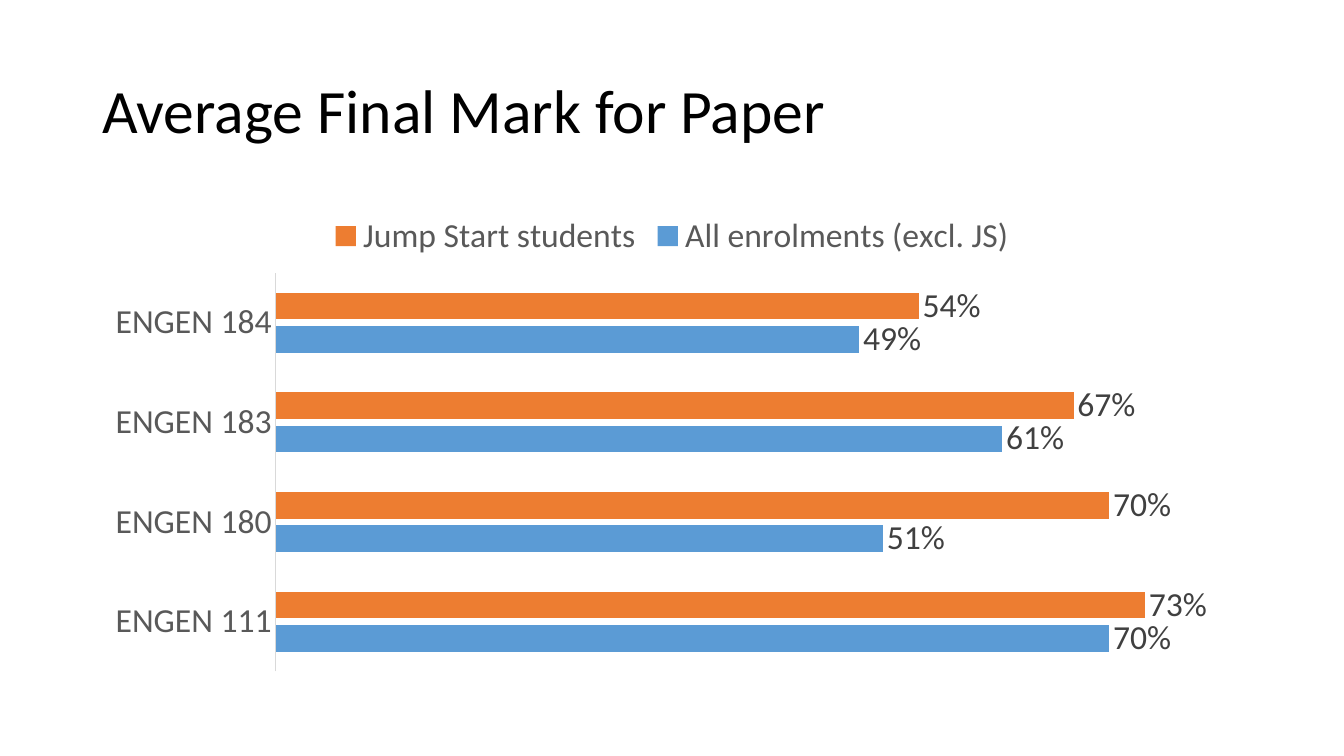
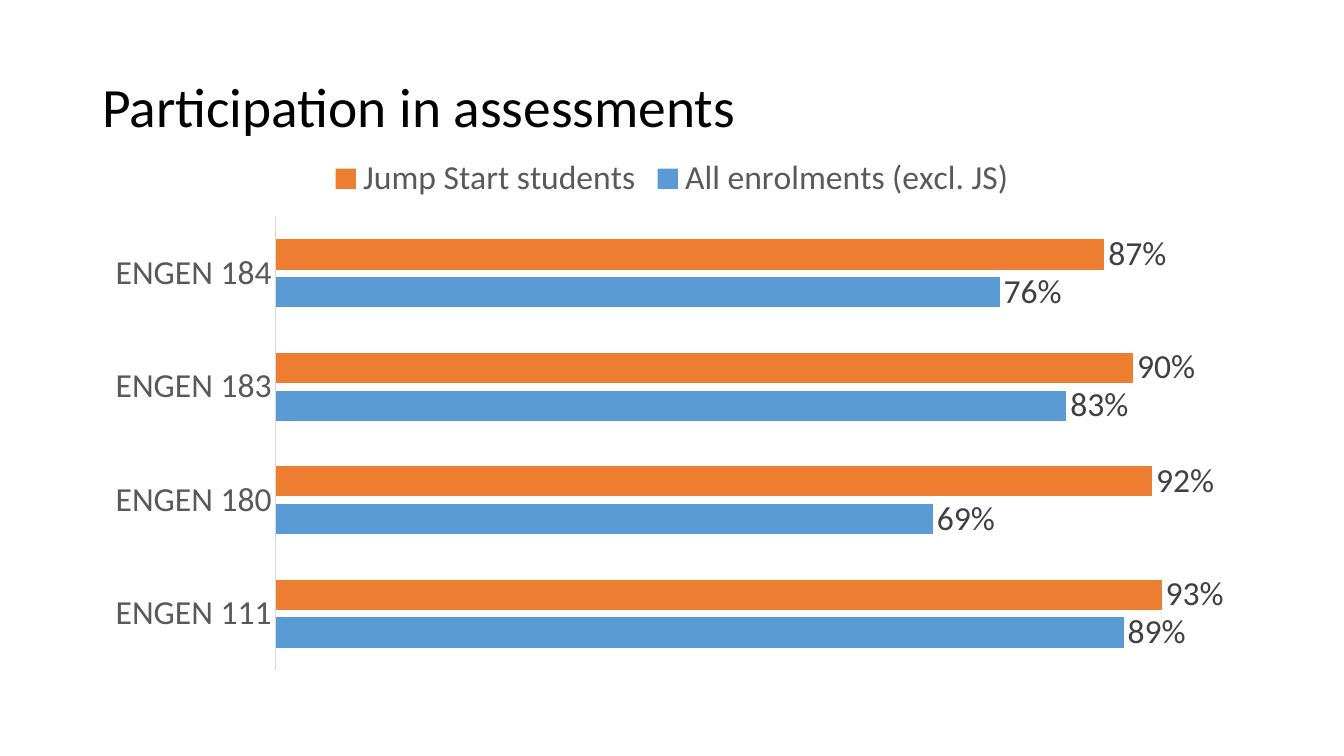
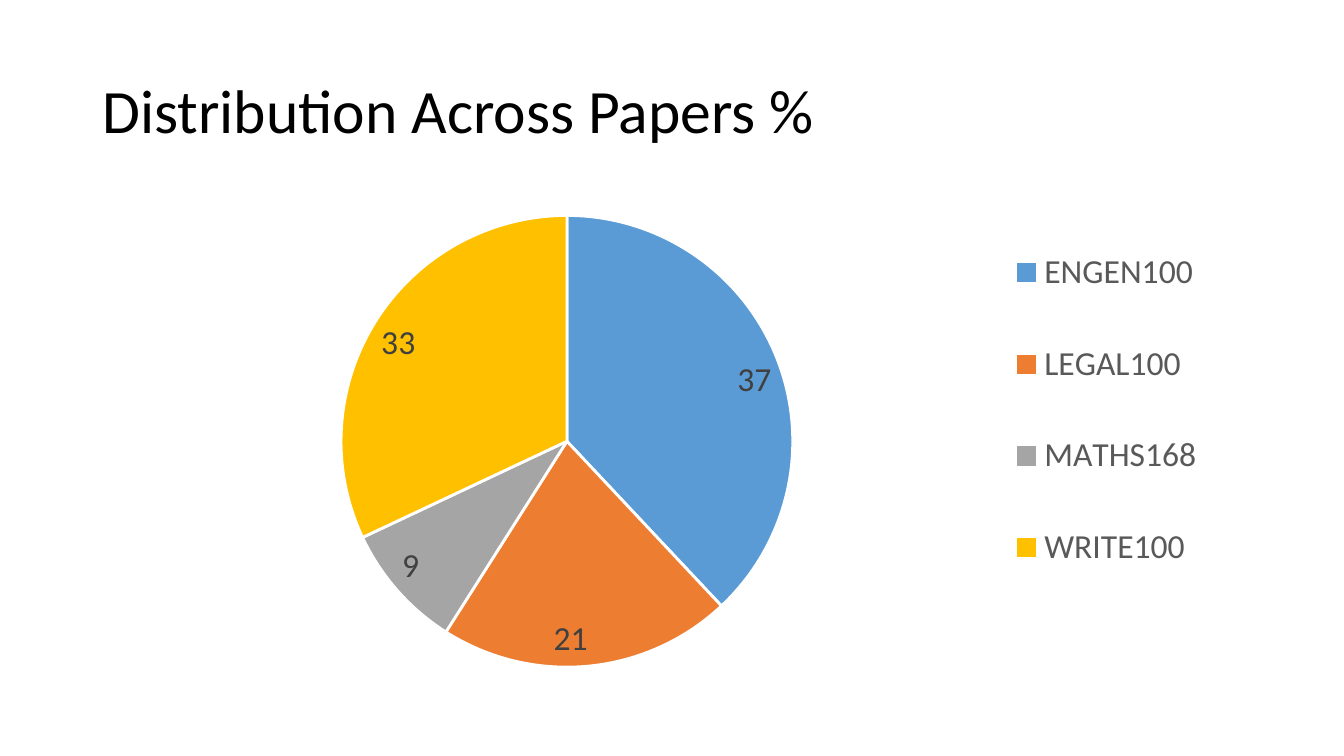
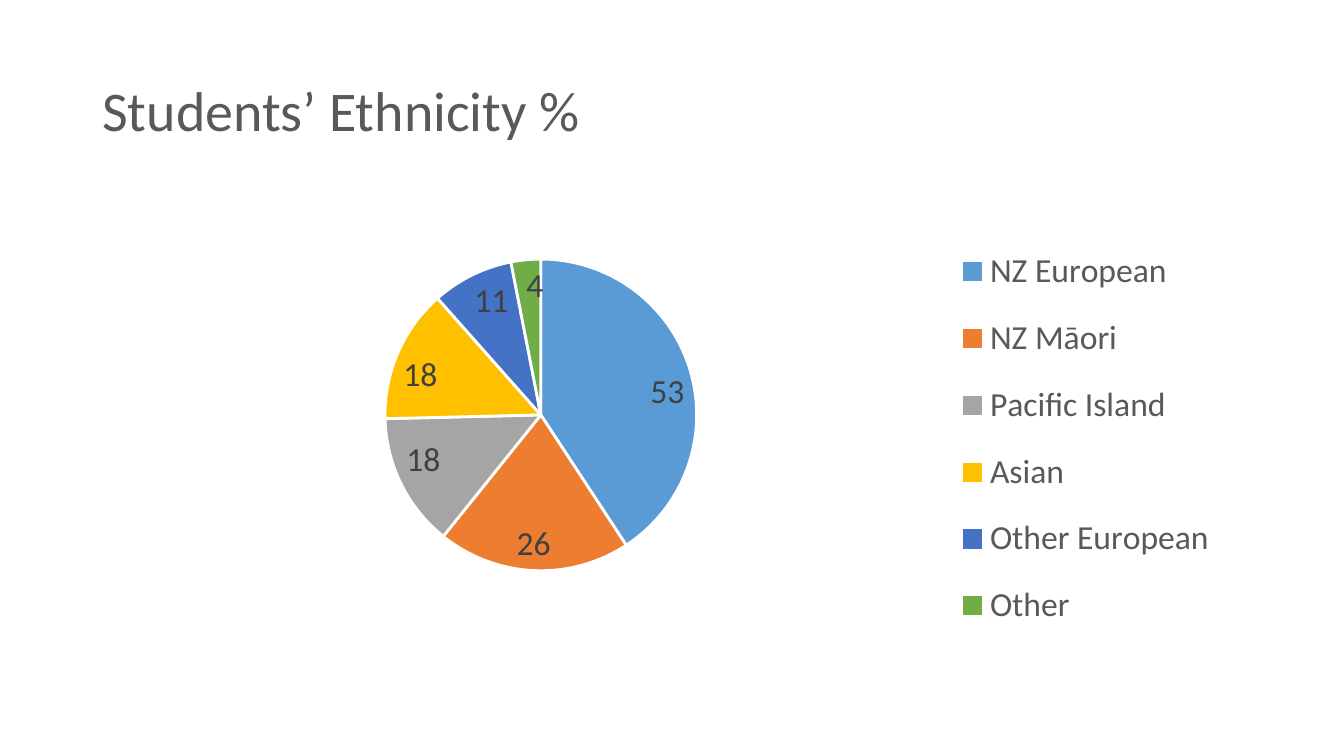
import pptx
import pptx.chart.data
import pptx.dml.color
import pptx.enum.chart
import pptx.enum.text
import pptx.oxml
import pptx.oxml.ns
import pptx.util

Pt = pptx.util.Pt
Chart = pptx.enum.chart

BLACK, DARK, GREY, PALE, WHITE = "000000", "404040", "595959", "D9D9D9", "FFFFFF"
ACCENTS = ["5B9BD5", "ED7D31", "A5A5A5", "FFC000", "4472C4", "70AD47"]
PAPERS = ["ENGEN 111", "ENGEN 180", "ENGEN 183", "ENGEN 184"]
GROUPS = ["All enrolments (excl. JS)", "Jump Start students"]
LEFT, WIDTH, CHART_BOTTOM = 66, 828, 486.5


def rgb(code):
    return pptx.dml.color.RGBColor.from_string(code)


def set_font(font, size, color):
    values = {"name": "Calibri", "size": Pt(size), "bold": False}
    for name, value in values.items():
        setattr(font, name, value)
    font.color.rgb = rgb(color)


pages = [
    {"title": "Average Final Mark for Paper", "size": 44, "color": BLACK,
     "title_top": 28.8, "left": LEFT, "top": 144, "kind": "bar", "maximum": 0.8,
     "categories": PAPERS,
     "series": [[0.70, 0.51, 0.61, 0.49], [0.73, 0.70, 0.67, 0.54]]},
    {"title": "Participation in assessments", "size": 39.6, "color": BLACK,
     "title_top": 26, "left": LEFT, "top": 103, "kind": "bar", "maximum": 1,
     "categories": PAPERS,
     "series": [[0.89, 0.69, 0.83, 0.76], [0.93, 0.92, 0.90, 0.87]]},
    {"title": "Distribution Across Papers %", "size": 44, "color": BLACK,
     "title_top": 28.8, "left": LEFT, "top": 144, "kind": "pie",
     "categories": ["ENGEN100", "LEGAL100", "MATHS168", "WRITE100"],
     "series": [[38, 21, 9, 32]], "labels": {0: "37", 3: "33"},
     "layouts": {"legend": {"x": 0.78, "y": 0, "w": 0.19, "h": 0.87}}},
    {"title": "Students’ Ethnicity %", "size": 40, "color": GREY,
     "title_top": 28.8, "left": 80, "top": 144, "kind": "pie",
     "categories": ["NZ European", "NZ Māori", "Pacific Island", "Asian",
                    "Other European", "Other"],
     "series": [[53, 26, 18, 18, 11, 4]],
     "layouts": {"plotArea": {"x": 0.04, "y": 0.12, "w": 0.66, "h": 0.65},
                 "legend": {"x": 0.72, "y": 0.05, "w": 0.24, "h": 0.89}}},
]

deck = pptx.Presentation()
deck.slide_width, deck.slide_height = Pt(960), Pt(540)

for page in pages:
    slide = deck.slides.add_slide(deck.slide_layouts[6])

    box = slide.shapes.add_textbox(Pt(LEFT), Pt(page["title_top"]), Pt(WIDTH), Pt(104.4))
    box.text_frame.word_wrap = True
    box.text_frame.vertical_anchor = pptx.enum.text.MSO_ANCHOR.MIDDLE
    para = box.text_frame.paragraphs[0]
    para.line_spacing = 0.9
    span = para.add_run()
    span.text = page["title"]
    set_font(span.font, page["size"], page["color"])

    is_bar = page["kind"] == "bar"
    data = pptx.chart.data.CategoryChartData(number_format="0%" if is_bar else "0")
    data.categories = page["categories"]
    for name, values in zip(GROUPS if is_bar else ["Series 1"], page["series"]):
        data.add_series(name, values)
    chart_type = Chart.XL_CHART_TYPE.BAR_CLUSTERED if is_bar else Chart.XL_CHART_TYPE.PIE
    chart = slide.shapes.add_chart(
        chart_type, Pt(page["left"]), Pt(page["top"]), Pt(WIDTH),
        Pt(CHART_BOTTOM - page["top"]), data).chart
    set_font(chart.font, 10, BLACK)
    chart.has_title = False
    chart.has_legend = True
    legend_place = Chart.XL_LEGEND_POSITION
    chart.legend.position = legend_place.TOP if is_bar else legend_place.RIGHT
    chart.legend.include_in_layout = False
    set_font(chart.legend.font, 24, GREY)

    plot = chart.plots[0]
    plot.vary_by_categories = not is_bar
    label_place = Chart.XL_LABEL_POSITION
    label_values = {
        "show_value": True,
        "number_format": "0%" if is_bar else "0",
        "number_format_is_linked": False,
        "position": label_place.OUTSIDE_END if is_bar else label_place.INSIDE_END,
    }
    for series in plot.series:
        for name, value in label_values.items():
            setattr(series.data_labels, name, value)
        set_font(series.data_labels.font, 24, DARK)

    if is_bar:
        plot.gap_width, plot.overlap = 150, -25
        for series, color in zip(plot.series, ACCENTS):
            series.format.fill.solid()
            series.format.fill.fore_color.rgb = rgb(color)
        axis = chart.category_axis
        axis.major_tick_mark = Chart.XL_TICK_MARK.NONE
        axis.format.line.width = Pt(0.75)
        axis.format.line.color.rgb = rgb(PALE)
        set_font(axis.tick_labels.font, 24, GREY)
        scale = chart.value_axis
        scale.minimum_scale, scale.maximum_scale = 0, page["maximum"]
        scale.has_major_gridlines = False
        scale.visible = False
    else:
        points = plot.series[0].points
        for index, color in enumerate(ACCENTS[:len(page["categories"])]):
            wedge = points[index].format
            wedge.fill.solid()
            wedge.fill.fore_color.rgb = rgb(color)
            wedge.line.width = Pt(2)
            wedge.line.color.rgb = rgb(WHITE)
        for index, text in page.get("labels", {}).items():
            label = points[index].data_label
            span = label.text_frame.paragraphs[0].add_run()
            span.text = text
            set_font(span.font, 24, DARK)
            label.position = label_place.INSIDE_END

    for part, place in page.get("layouts", {}).items():
        area = chart.element.chart.find(pptx.oxml.ns.qn(f"c:{part}"))
        for old in area.findall(pptx.oxml.ns.qn("c:layout")):
            area.remove(old)
        is_plot = part == "plotArea"
        target = {"layoutTarget": "inner"} if is_plot else {}
        settings = {**target, "xMode": "edge", "yMode": "edge", **place}
        values = "".join(f'<c:{tag} val="{value}"/>' for tag, value in settings.items())
        area.insert(0 if is_plot else 1, pptx.oxml.parse_xml(
            f'<c:layout {pptx.oxml.ns.nsdecls("c")}>'
            f"<c:manualLayout>{values}</c:manualLayout></c:layout>"))

deck.save("out.pptx")
